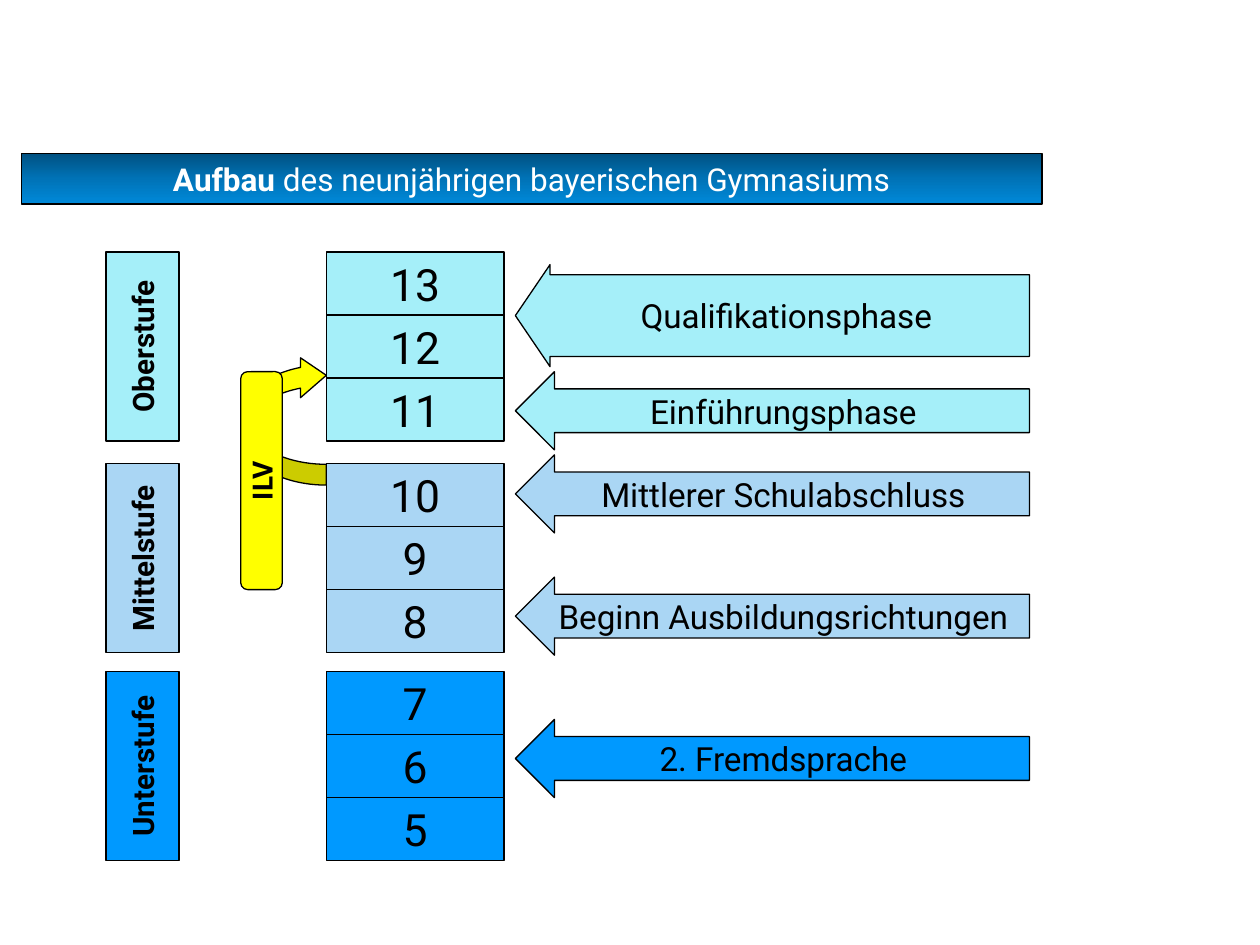
from copy import deepcopy

from pptx import Presentation
from pptx.dml.color import RGBColor
from pptx.enum.shapes import MSO_SHAPE
from pptx.enum.text import MSO_ANCHOR, PP_ALIGN
from pptx.oxml.ns import qn
from pptx.util import Inches, Pt

RECTANGLE = MSO_SHAPE.RECTANGLE
LEFT_ARROW = MSO_SHAPE.LEFT_ARROW
CURVED_ARROW = MSO_SHAPE.CURVED_RIGHT_ARROW
ROUNDED_BOX = MSO_SHAPE.FLOWCHART_ALTERNATE_PROCESS
CENTER = PP_ALIGN.CENTER
MIDDLE = MSO_ANCHOR.MIDDLE

FONT = "Roboto"
COLORS = {
    "Oberstufe": "A5EFF9",
    "Mittelstufe": "AAD6F4",
    "Unterstufe": "0099FF",
    "ilv": "FFFF00",
    "black": "000000",
    "white": "FFFFFF",
    "banner_top": "005181",
    "banner_middle": "0073B7",
    "banner_bottom": "0089D9",
}


def rgb(name):
    return RGBColor.from_string(COLORS[name])


def add_box(kind, left, top, width, height, fill, text="", size=18, bold=False, upright=False):
    box = slide.shapes.add_shape(kind, Inches(left), Inches(top), Inches(width), Inches(height))
    box.shadow.inherit = False
    box.fill.solid()
    box.fill.fore_color.rgb = rgb(fill)
    box.line.color.rgb = rgb("black")
    box.line.width = Pt(0.75)
    frame = box.text_frame
    frame.margin_left = frame.margin_right = frame.margin_top = frame.margin_bottom = 0
    frame.vertical_anchor = MIDDLE
    frame.word_wrap = False
    if upright:
        frame._txBody.bodyPr.set("vert", "vert270")
    if text:
        frame.text = text
        frame.paragraphs[0].alignment = CENTER
        font = frame.paragraphs[0].runs[0].font
        font.name = FONT
        font.size = Pt(size)
        font.bold = bold
        font.color.rgb = rgb("black")
    return box


prs = Presentation()
prs.slide_width = Inches(10)
prs.slide_height = Inches(7.5)
slide = prs.slides.add_slide(prs.slide_layouts[6])

banner = add_box(RECTANGLE, 0.17, 1.22, 8.1, 0.4, "banner_middle")
banner.fill.gradient()
banner.fill.gradient_angle = 270
stop_list = banner._element.spPr.find(qn("a:gradFill")).find(qn("a:gsLst"))
stop_list.insert(1, deepcopy(stop_list[0]))
banner_colors = ["banner_top", "banner_middle", "banner_bottom"]
for stop, position, name in zip(banner.fill.gradient_stops, [0, 0.5, 1], banner_colors):
    stop.position = position
    stop.color.rgb = rgb(name)
title = banner.text_frame.paragraphs[0]
title.alignment = CENTER
for words, bold in [("Aufbau", True), (" des neunjährigen bayerischen Gymnasiums", False)]:
    run = title.add_run()
    run.text = words
    run.font.name = FONT
    run.font.size = Pt(18)
    run.font.bold = bold
    run.font.color.rgb = rgb("white")

GRADE_HEIGHT = 0.5
stages = [
    ("Oberstufe", 2.0, [13, 12, 11]),
    ("Mittelstufe", 3.68, [10, 9, 8]),
    ("Unterstufe", 5.33, [7, 6, 5]),
]
for stage, top, grades in stages:
    add_box(RECTANGLE, 0.84, top, 0.58, 1.5, stage, stage, 16.9, True, True)
    for row, grade in enumerate(grades):
        add_box(RECTANGLE, 2.59, top + row * GRADE_HEIGHT, 1.41, GRADE_HEIGHT,
                stage, str(grade), 25.4)

milestones = [
    ("2. Fremdsprache", "Unterstufe", 5.71, 0.62, 0.56, 0.5),
    ("Beginn Ausbildungsrichtungen", "Mittelstufe", 4.58, 0.62, 0.56, 0.5),
    ("Mittlerer Schulabschluss", "Mittelstufe", 3.61, 0.62, 0.56, 0.5),
    ("Einführungsphase", "Oberstufe", 2.95, 0.62, 0.56, 0.5),
    ("Qualifikationsphase", "Oberstufe", 2.1, 0.81, 0.8, 0.34),
]
for milestone, stage, top, height, shaft, head in milestones:
    arrow = add_box(LEFT_ARROW, 4.09, top, 4.08, height, stage, milestone, 19)
    arrow.adjustments[0] = shaft
    arrow.adjustments[1] = head

skip_arrow = add_box(CURVED_ARROW, 1.93, 2.82, 0.66, 1.03, "ilv")
skip_arrow.rotation = 180
skip_arrow._element.spPr.xfrm.set("flipH", "1")
for index, value in enumerate([0.25, 0.48, 0.31]):
    skip_arrow.adjustments[index] = value

ilv = add_box(ROUNDED_BOX, 1.91, 2.95, 0.33, 1.73, "ilv", "ILV", 15.9, True, True)
ilv.rotation = 180
ilv._element.spPr.xfrm.set("flipV", "1")

prs.save("out.pptx")
